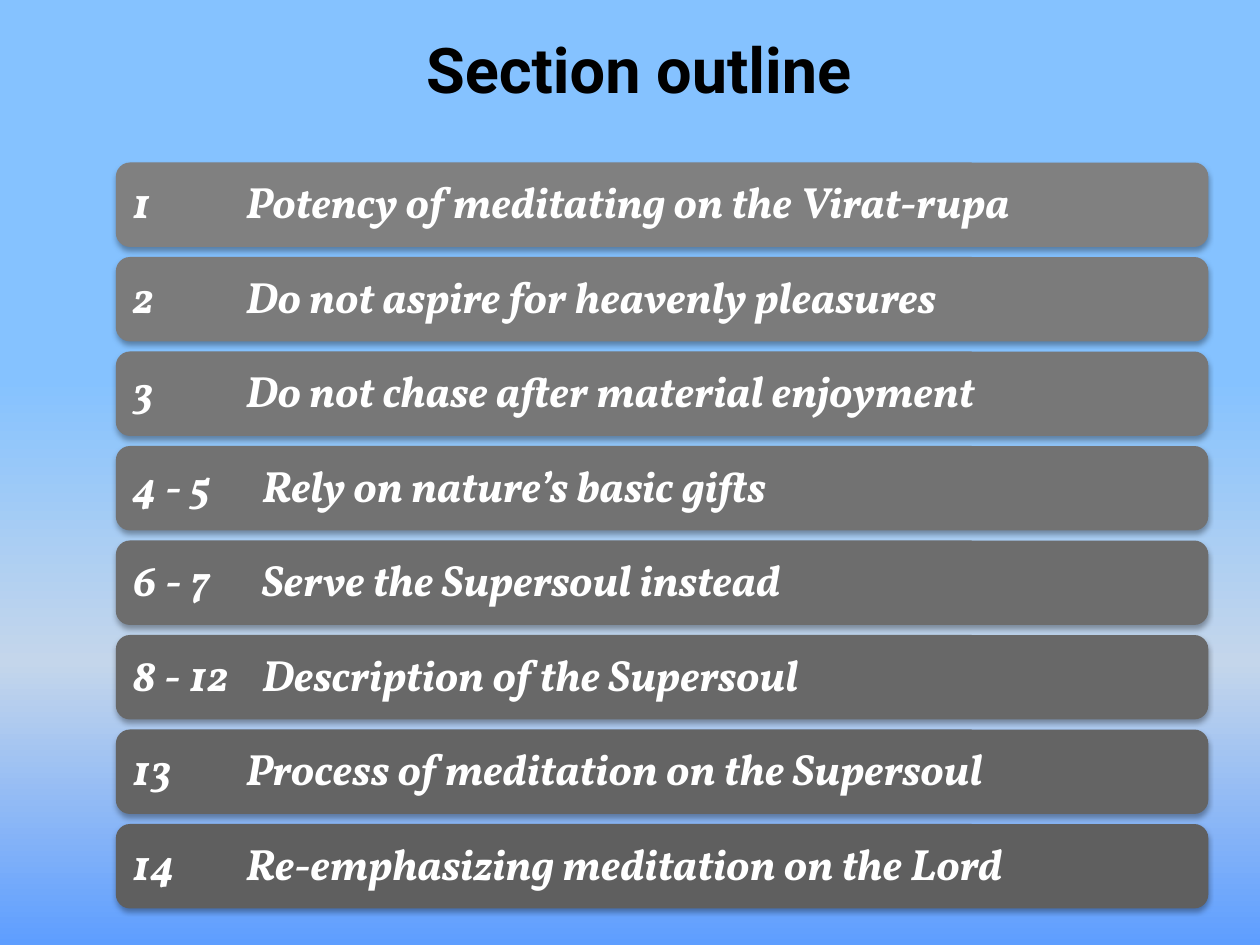
from copy import deepcopy

from lxml import etree
from pptx import Presentation
from pptx import util as u
from pptx.dml.color import RGBColor
from pptx.enum import shapes, text
from pptx.oxml import ns

BLACK = RGBColor(0x00, 0x00, 0x00)
WHITE = RGBColor(0xFF, 0xFF, 0xFF)
SKY = [
    (0.4, RGBColor(0x85, 0xC2, 0xFF)),
    (0.7, RGBColor(0xC4, 0xD6, 0xEB)),
    (1.0, RGBColor(0x5E, 0x9E, 0xFF)),
]
FIRST_GRAY, LAST_GRAY = 0x80, 0x5F

TITLE_FONT = {"name": "Roboto", "size": u.Pt(36), "bold": True}
ROW_FONT = {"name": "Vollkorn", "size": u.Pt(25), "bold": True, "italic": True}
ROW_FRAME = {
    "word_wrap": True,
    "vertical_anchor": text.MSO_ANCHOR.MIDDLE,
    "margin_left": u.Inches(0.1),
    "margin_right": u.Inches(0.1),
    "margin_top": u.Inches(0.1),
    "margin_bottom": u.Inches(0.1),
}

SECTIONS = [
    ("1", "Potency of meditating on the Virat-rupa"),
    ("2", "Do not aspire for heavenly pleasures"),
    ("3", "Do not chase after material enjoyment"),
    ("4 - 5", "Rely on nature’s basic gifts"),
    ("6 - 7", "Serve the Supersoul instead"),
    ("8 - 12", "Description of the Supersoul"),
    ("13", "Process of meditation on the Supersoul"),
    ("14", "Re-emphasizing meditation on the Lord"),
]
LEFT, TOP, PITCH = 0.92, 1.29, 0.75
WIDTH, HEIGHT, INSET = 8.67, 0.67, 0.03
SINGLE_TAB, RANGE_TAB = 0.9, 1.03


def apply(target, values):
    for name, value in values.items():
        setattr(target, name, value)


def add_xml(parent, tag, **attributes):
    values = {name: str(value) for name, value in attributes.items()}
    return etree.SubElement(parent, ns.qn(tag), values)


class OutlineSlide:
    def __init__(self, deck):
        self.page = deck.slides.add_slide(deck.slide_layouts[5])
        self.group = None

    def background(self, stops):
        fill = self.page.background.fill
        fill.gradient()
        fill.gradient_angle = 270
        stop_list = self.page.element.xpath(".//a:gsLst")[0]
        stop_list.append(deepcopy(stop_list[0]))
        for stop, (position, color) in zip(fill.gradient_stops, stops):
            stop.position = position
            stop.color.rgb = color

    def add_words(self, para, words, font, color):
        span = para.add_run()
        span.text = words
        apply(span.font, font)
        span.font.color.rgb = color

    def title(self, words, left, top, width, height):
        box = self.page.shapes.title
        apply(box, {"left": u.Inches(left), "top": u.Inches(top),
                    "width": u.Inches(width), "height": u.Inches(height)})
        para = box.text_frame.paragraphs[0]
        para.alignment = text.PP_ALIGN.CENTER
        para._p.get_or_add_pPr().set("marL", str(u.Inches(0.15)))
        self.add_words(para, words, TITLE_FONT, BLACK)

    def bar(self, left, top, width, height, color):
        box = self.group.shapes.add_shape(
            shapes.MSO_SHAPE.ROUNDED_RECTANGLE,
            *map(u.Inches, (left, top, width, height)))
        box.fill.solid()
        box.fill.fore_color.rgb = color
        box.line.fill.background()
        box.shadow.inherit = False
        effects = box._element.spPr.find(ns.qn("a:effectLst"))
        shadow = add_xml(effects, "a:outerShdw", blurRad=u.Pt(3.1),
                         dist=u.Pt(1.8), dir=5400000, rotWithShape=0)
        shade = add_xml(shadow, "a:srgbClr", val=BLACK)
        add_xml(shade, "a:alpha", val=35000)

    def label(self, left, top, width, height, words, tab):
        box = self.group.shapes.add_textbox(
            *map(u.Inches, (left, top, width, height)))
        apply(box.text_frame, ROW_FRAME)
        para = box.text_frame.paragraphs[0]
        para.line_spacing = 0.9
        tabs = add_xml(para._p.get_or_add_pPr(), "a:tabLst")
        add_xml(tabs, "a:tab", pos=u.Inches(tab), algn="l")
        self.add_words(para, words, ROW_FONT, WHITE)

    def outline(self, sections):
        self.group = self.page.shapes.add_group_shape()
        step = (LAST_GRAY - FIRST_GRAY) / (len(sections) - 1)
        for row, (verses, topic) in enumerate(sections):
            top = TOP + row * PITCH
            gray = round(FIRST_GRAY + row * step)
            self.bar(LEFT, top, WIDTH, HEIGHT, RGBColor(gray, gray, gray))
            self.label(LEFT + INSET, top + INSET, WIDTH - 2 * INSET,
                       HEIGHT - 2 * INSET, f"{verses}\t{topic}",
                       RANGE_TAB if "-" in verses else SINGLE_TAB)


def main():
    deck = Presentation()
    apply(deck, {"slide_width": u.Inches(10), "slide_height": u.Inches(7.5)})
    slide = OutlineSlide(deck)
    slide.background(SKY)
    slide.title("Section outline", 0.33, 0.17, 9.33, 0.75)
    slide.outline(SECTIONS)
    deck.save("out.pptx")


if __name__ == "__main__":
    main()
